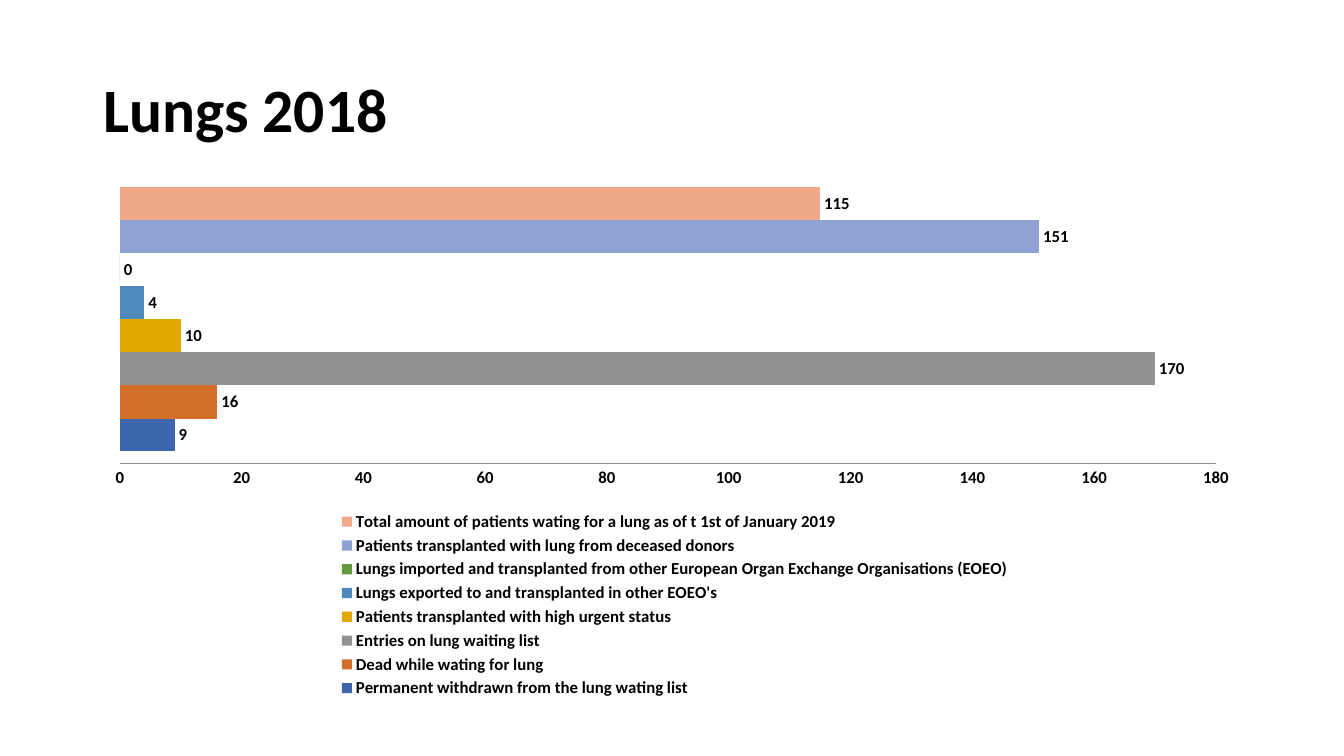
from dataclasses import dataclass

from lxml.etree import SubElement
from pptx import Presentation
from pptx.chart.data import CategoryChartData
from pptx.dml.color import RGBColor
from pptx.enum.chart import (XL_CHART_TYPE, XL_LABEL_POSITION,
                             XL_LEGEND_POSITION, XL_TICK_MARK)
from pptx.enum.text import MSO_ANCHOR, MSO_AUTO_SIZE, PP_ALIGN
from pptx.oxml.ns import qn
from pptx.util import Emu, Pt

# Content: series name, value, colour
TITLE = "Lungs 2018"
CATEGORY = "1"
SERIES = [
    ("Permanent withdrawn from the lung wating list", 9, "3C65AE"),
    ("Dead while wating for lung", 16, "D36F2B"),
    ("Entries on lung waiting list", 170, "929292"),
    ("Patients transplanted with high urgent status", 10, "E2AA00"),
    ("Lungs exported to and transplanted in other EOEO's", 4, "4F89BC"),
    ("Lungs imported and transplanted from other European Organ Exchange "
     "Organisations (EOEO)", 0, "61993B"),
    ("Patients transplanted with lung from deceased donors", 151, "8FA2D4"),
    ("Total amount of patients wating for a lung as of t 1st of January 2019",
     115, "F1A78A"),
]


@dataclass(frozen=True)
class Theme:
    font: str = "Calibri"
    text: str = "000000"
    axis: str = "8C8C8C"
    title_size: int = 44
    chart_size: int = 12


THEME = Theme()

# Geometry in px: left, top, width, height
EMU_PER_PX = 914400 / 100.8
SLIDE_SIZE = (1344, 756)
TITLE_BOX = (93, 40, 1159, 146)
CHART_BOX = (93, 163, 1159, 539)
PLOT_BOX = (120, 175, 1096, 289)
LEGEND_BOX = (335, 508, 680, 194)


def px(value):
    return Emu(round(value * EMU_PER_PX))


def style_font(font, size):
    font.name = THEME.font
    font.size = Pt(size)
    font.bold = True
    font.color.rgb = RGBColor.from_string(THEME.text)


def place_in_chart(element, box, index, inner=False):
    """Give a chart part a fixed place, as fractions of the chart frame."""
    for old in element.findall(qn("c:layout")):
        element.remove(old)
    layout = SubElement(element, qn("c:layout"))
    element.insert(index, layout)
    manual = SubElement(layout, qn("c:manualLayout"))
    settings = [("layoutTarget", "inner")] if inner else []
    settings += [("xMode", "edge"), ("yMode", "edge")]
    left, top, width, height = CHART_BOX
    fractions = ((box[0] - left) / width, (box[1] - top) / height,
                 box[2] / width, box[3] / height)
    settings += [(tag, f"{part:.4f}") for tag, part in zip("xywh", fractions)]
    for tag, value in settings:
        SubElement(manual, qn(f"c:{tag}")).set("val", value)


def add_title(page):
    title = page.shapes.title
    title.left, title.top, title.width, title.height = map(px, TITLE_BOX)
    frame = title.text_frame
    frame.word_wrap = True
    frame.auto_size = MSO_AUTO_SIZE.NONE
    frame.vertical_anchor = MSO_ANCHOR.MIDDLE
    para = frame.paragraphs[0]
    para.alignment = PP_ALIGN.LEFT
    para.line_spacing = 0.9
    span = para.add_run()
    span.text = TITLE
    style_font(span.font, THEME.title_size)


def add_bar_chart(page):
    data = CategoryChartData()
    data.categories = [CATEGORY]
    for name, value, _ in SERIES:
        data.add_series(name, [value])
    chart = page.shapes.add_chart(XL_CHART_TYPE.BAR_CLUSTERED,
                                  *map(px, CHART_BOX), data).chart
    chart.has_title = False
    style_font(chart.font, THEME.chart_size)

    # Bars and value labels
    plot = chart.plots[0]
    plot.gap_width = 75
    plot.overlap = 0
    plot.vary_by_categories = False
    for series, (_, _, color) in zip(plot.series, SERIES):
        series.format.fill.solid()
        series.format.fill.fore_color.rgb = RGBColor.from_string(color)
        labels = series.data_labels
        labels.show_value = True
        labels.position = XL_LABEL_POSITION.OUTSIDE_END
        style_font(labels.font, THEME.chart_size)

    # Axes
    chart.category_axis.visible = False
    axis = chart.value_axis
    axis.minimum_scale, axis.maximum_scale, axis.major_unit = 0, 180, 20
    axis.has_major_gridlines = False
    axis.major_tick_mark = axis.minor_tick_mark = XL_TICK_MARK.NONE
    axis.format.line.width = Pt(0.75)
    axis.format.line.color.rgb = RGBColor.from_string(THEME.axis)
    style_font(axis.tick_labels.font, THEME.chart_size)

    # Legend and fixed layout
    chart.has_legend = True
    legend = chart.legend
    legend.position = XL_LEGEND_POSITION.BOTTOM
    legend.include_in_layout = False
    style_font(legend.font, THEME.chart_size)
    legend_xml = chart.element.find(".//" + qn("c:legend"))
    plot_area_xml = chart.element.find(".//" + qn("c:plotArea"))
    place_in_chart(legend_xml, LEGEND_BOX, 1)
    place_in_chart(plot_area_xml, PLOT_BOX, 0, inner=True)


def main():
    deck = Presentation()
    deck.slide_width, deck.slide_height = map(px, SLIDE_SIZE)
    page = deck.slides.add_slide(deck.slide_layouts[5])
    add_title(page)
    add_bar_chart(page)
    deck.save("out.pptx")


if __name__ == "__main__":
    main()
